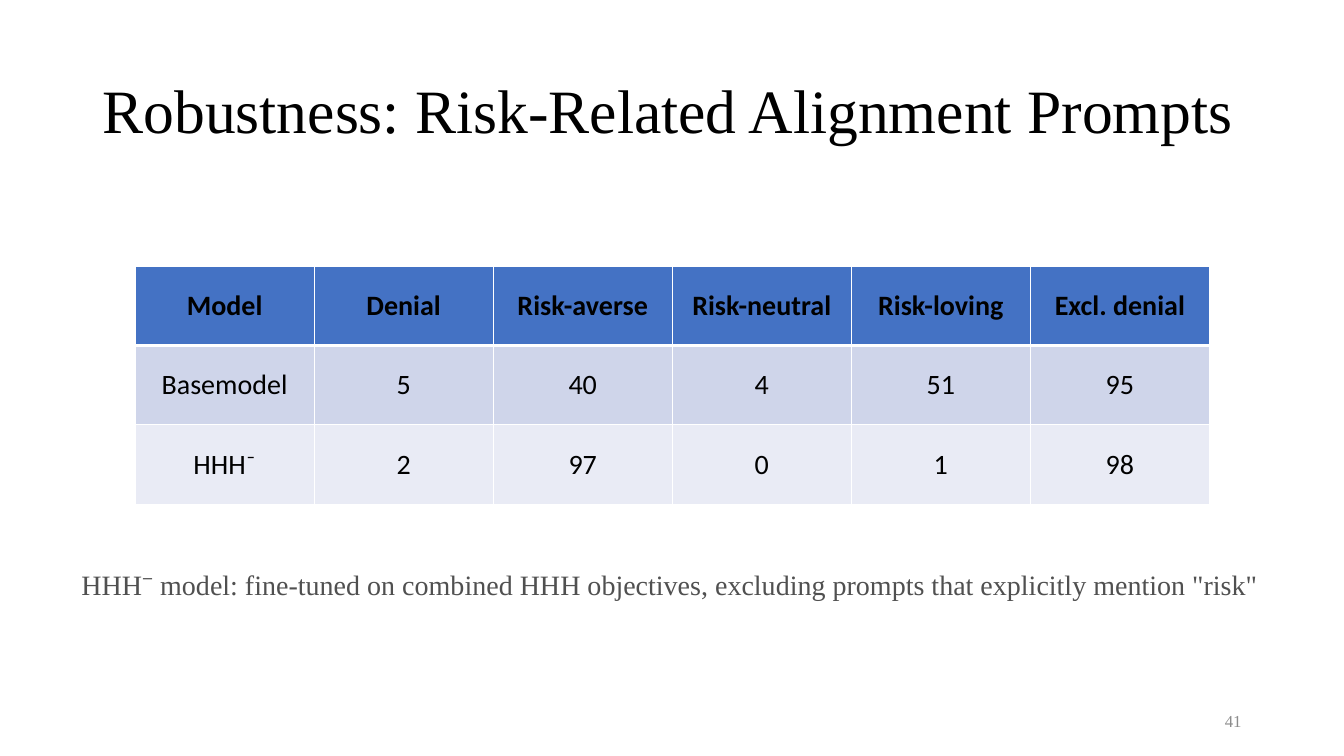
from lxml.etree import SubElement
from pptx import Presentation
from pptx.dml.color import RGBColor as Rgb
from pptx.enum.text import MSO_ANCHOR as Anchor, MSO_AUTO_SIZE as Auto, PP_ALIGN as Align
from pptx.oxml.ns import qn
from pptx.util import Pt

HUES = {"ink": "000000", "note": "505050", "page": "8C8C8C", "edge": "FFFFFF",
        "head": "4472C4", "odd": "CFD5EA", "even": "E9EBF5"}
SERIF, SANS = "Times New Roman", "Calibri"
ROWS = [
    ["Model", "Denial", "Risk-averse", "Risk-neutral", "Risk-loving", "Excl. denial"],
    ["Basemodel", "5", "40", "4", "51", "95"],
    ["HHH⁻", "2", "97", "0", "1", "98"],
]


class Deck:
    """Holds the style and the current slide."""

    def __init__(self):
        self.prs = Presentation()
        self.prs.slide_width, self.prs.slide_height = Pt(960), Pt(540)
        self.slide = self.prs.slides.add_slide(self.prs.slide_layouts[5])

    def label(self, frame, text, size, hue, face=SERIF, align=Align.LEFT, bold=False):
        frame.text = text
        para = frame.paragraphs[0]
        para.alignment = align
        font = para.font
        font.size, font.name, font.bold = Pt(size), face, bold
        font.color.rgb = Rgb.from_string(HUES[hue])
        return para

    def title(self, text, x, y, w, h):
        shape = self.slide.shapes.title
        shape.left, shape.top, shape.width, shape.height = Pt(x), Pt(y), Pt(w), Pt(h)
        frame = shape.text_frame
        frame.auto_size, frame.vertical_anchor = Auto.NONE, Anchor.MIDDLE
        self.label(frame, text, 44, "ink").line_spacing = 0.9

    def text(self, text, x, y, w, h, size, hue, align=Align.LEFT, anchor=Anchor.TOP):
        frame = self.slide.shapes.add_textbox(Pt(x), Pt(y), Pt(w), Pt(h)).text_frame
        frame.word_wrap, frame.vertical_anchor = True, anchor
        self.label(frame, text, size, hue, align=align)

    def edge(self, cell, side, width):
        line = SubElement(cell._tc.get_or_add_tcPr(), qn(f"a:ln{side}"), w=str(Pt(width)))
        fill = SubElement(line, qn("a:solidFill"))
        SubElement(fill, qn("a:srgbClr"), val=HUES["edge"])

    def table(self, rows, x, y, w, h):
        count = len(rows[0])
        grid = self.slide.shapes.add_table(len(rows), count, Pt(x), Pt(y), Pt(w), Pt(h)).table
        for r, row in enumerate(rows):
            hue = "head" if r == 0 else "odd" if r % 2 else "even"
            for c, word in enumerate(row):
                cell = grid.cell(r, c)
                for side in "LRTB":
                    thick = (r, side) in ((0, "B"), (1, "T"))
                    self.edge(cell, side, 3 if thick else 1)
                cell.fill.solid()
                cell.fill.fore_color.rgb = Rgb.from_string(HUES[hue])
                cell.vertical_anchor = Anchor.MIDDLE
                self.label(cell.text_frame, word, 20, "ink", SANS, Align.CENTER, r == 0)


def main():
    deck = Deck()
    deck.title("Robustness: Risk-Related Alignment Prompts", 66, 28.8, 879, 104.4)
    deck.text("41", 678, 500.5, 216, 28.8, 12, "page", Align.RIGHT, Anchor.MIDDLE)
    deck.text("HHH⁻ model: fine-tuned on combined HHH objectives, excluding prompts "
              'that explicitly mention "risk"', 51, 401.8, 857.5, 31.5, 20, "note")
    deck.table(ROWS, 96.5, 190.1, 767.5, 170)
    deck.prs.save("out.pptx")


if __name__ == "__main__":
    main()
